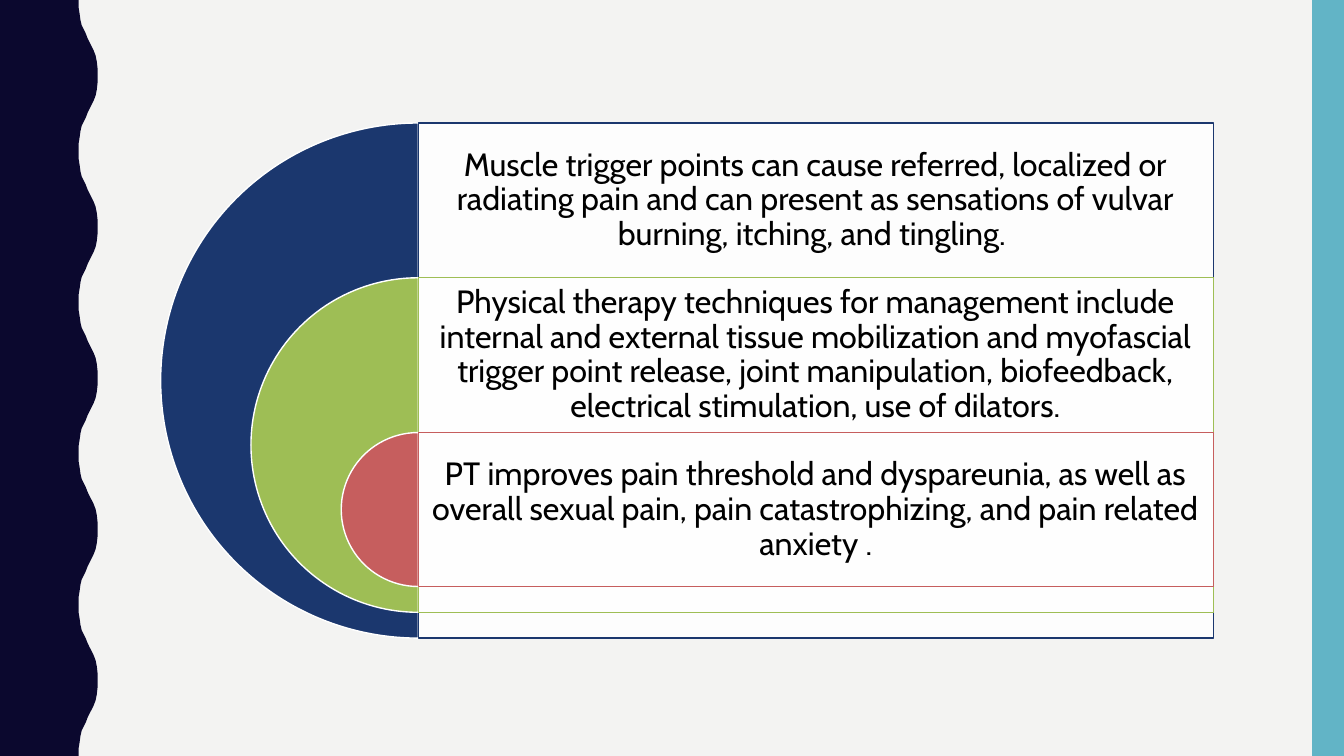
import pptx
import pptx.util
import pptx.dml.color
import pptx.enum.shapes
import pptx.enum.text
import pptx.oxml.ns
import lxml.etree

Cm = pptx.util.Cm
Pt = pptx.util.Pt
SHAPES = pptx.enum.shapes.MSO_SHAPE

SLIDE_WIDTH, SLIDE_HEIGHT = 33.87, 19.05
WAVE_LENGTH = 3.81
# Crest outline (x, y) over half a wave; the other half mirrors it
HALF_WAVE = [(1.98, 0), (1.98, 0.18), (2.01, 0.36), (2.03, 0.51), (2.06, 0.64),
             (2.11, 0.74), (2.16, 0.84), (2.21, 0.97), (2.26, 1.07), (2.31, 1.17),
             (2.36, 1.27), (2.41, 1.4), (2.44, 1.55), (2.46, 1.73), (2.46, 1.9)]
RINGS = [
    ("1B376E", "Muscle trigger points can cause referred, localized or radiating pain "
               "and can present as sensations of vulvar burning, itching, and tingling. "),
    ("9EBE55", "Physical therapy techniques for management include internal and external "
               "tissue mobilization and myofascial trigger point release, joint "
               "manipulation, biofeedback, electrical stimulation, use of dilators."),
    ("C65E5E", "PT improves pain threshold and dyspareunia, as well as overall sexual "
               "pain, pain catastrophizing, and pain related anxiety ."),
]


def color(hex_code):
    return pptx.dml.color.RGBColor.from_string(hex_code)


def paint(shape, fill, line=None, opacity=100):
    shape.shadow.inherit = False
    shape.fill.solid()
    shape.fill.fore_color.rgb = color(fill)
    if opacity < 100:
        rgb = shape.fill._xPr.find(".//" + pptx.oxml.ns.qn("a:srgbClr"))
        alpha = lxml.etree.SubElement(rgb, pptx.oxml.ns.qn("a:alpha"))
        alpha.set("val", str(opacity * 1000))
    if line:
        shape.line.color.rgb = color(line)
        shape.line.width = Pt(1)
    else:
        shape.line.fill.background()


def add_shape(slide, kind, left, top, width, height):
    return slide.shapes.add_shape(kind, Cm(left), Cm(top), Cm(width), Cm(height))


def add_wavy_edge(slide, left, top, height):
    wave = HALF_WAVE + [(x, WAVE_LENGTH - y) for x, y in reversed(HALF_WAVE)]
    count = round(height / WAVE_LENGTH)
    points = [(x, y + number * WAVE_LENGTH) for number in range(count) for x, y in wave]
    points.append((0, height))
    builder = slide.shapes.build_freeform(Cm(left), Cm(top))
    builder.add_line_segments([(Cm(left + x), Cm(top + y)) for x, y in points], close=True)
    paint(builder.convert_to_shape(), "0B082E")


def add_side_bar(slide, left, top, width, height):
    paint(add_shape(slide, SHAPES.RECTANGLE, left, top, width, height), "62B4C6")


def add_statement(slide, text, left, top, width, height):
    box = slide.shapes.add_textbox(Cm(left), Cm(top), Cm(width), Cm(height))
    frame = box.text_frame
    frame.word_wrap = True
    frame.vertical_anchor = pptx.enum.text.MSO_ANCHOR.MIDDLE
    frame.margin_left = frame.margin_right = Cm(0.25)
    frame.margin_top = frame.margin_bottom = Cm(0.25)
    paragraph = frame.paragraphs[0]
    paragraph.alignment = pptx.enum.text.PP_ALIGN.CENTER
    paragraph.line_spacing = 0.9
    run = paragraph.add_run()
    run.text = text
    run.font.name = "Cabin"
    run.font.size = Pt(23)
    run.font.color.rgb = color("000000")


def add_nested_rings(slide, left, top, width, height):
    row_height = 3.9
    shrink = 4.55
    center = left + height / 2
    panel_width = width - height / 2
    for index, (accent, text) in enumerate(RINGS):
        diameter = height - index * shrink
        row_top = top + index * row_height
        # Left half of a disc
        half_disc = add_shape(slide, SHAPES.PIE, center - diameter / 2, row_top,
                              diameter, diameter)
        half_disc.adjustments[0] = 54
        half_disc.adjustments[1] = 162
        paint(half_disc, accent, "FFFFFF")
        # Panel reaching to the bottom of the disc, with its statement on top
        panel = add_shape(slide, SHAPES.RECTANGLE, center, row_top, panel_width, diameter)
        paint(panel, "FFFFFF", accent, opacity=90)
        add_statement(slide, text, center, row_top, panel_width, row_height)


def main():
    presentation = pptx.Presentation()
    presentation.slide_width = Cm(SLIDE_WIDTH)
    presentation.slide_height = Cm(SLIDE_HEIGHT)
    slide = presentation.slides.add_slide(presentation.slide_layouts[6])
    slide.background.fill.solid()
    slide.background.fill.fore_color.rgb = color("F3F3F2")

    add_wavy_edge(slide, 0, 0, SLIDE_HEIGHT)
    add_side_bar(slide, 33.07, 0, 0.8, SLIDE_HEIGHT)
    add_nested_rings(slide, 4.05, 3.1, 26.53, 12.98)
    presentation.save("out.pptx")


if __name__ == "__main__":
    main()
